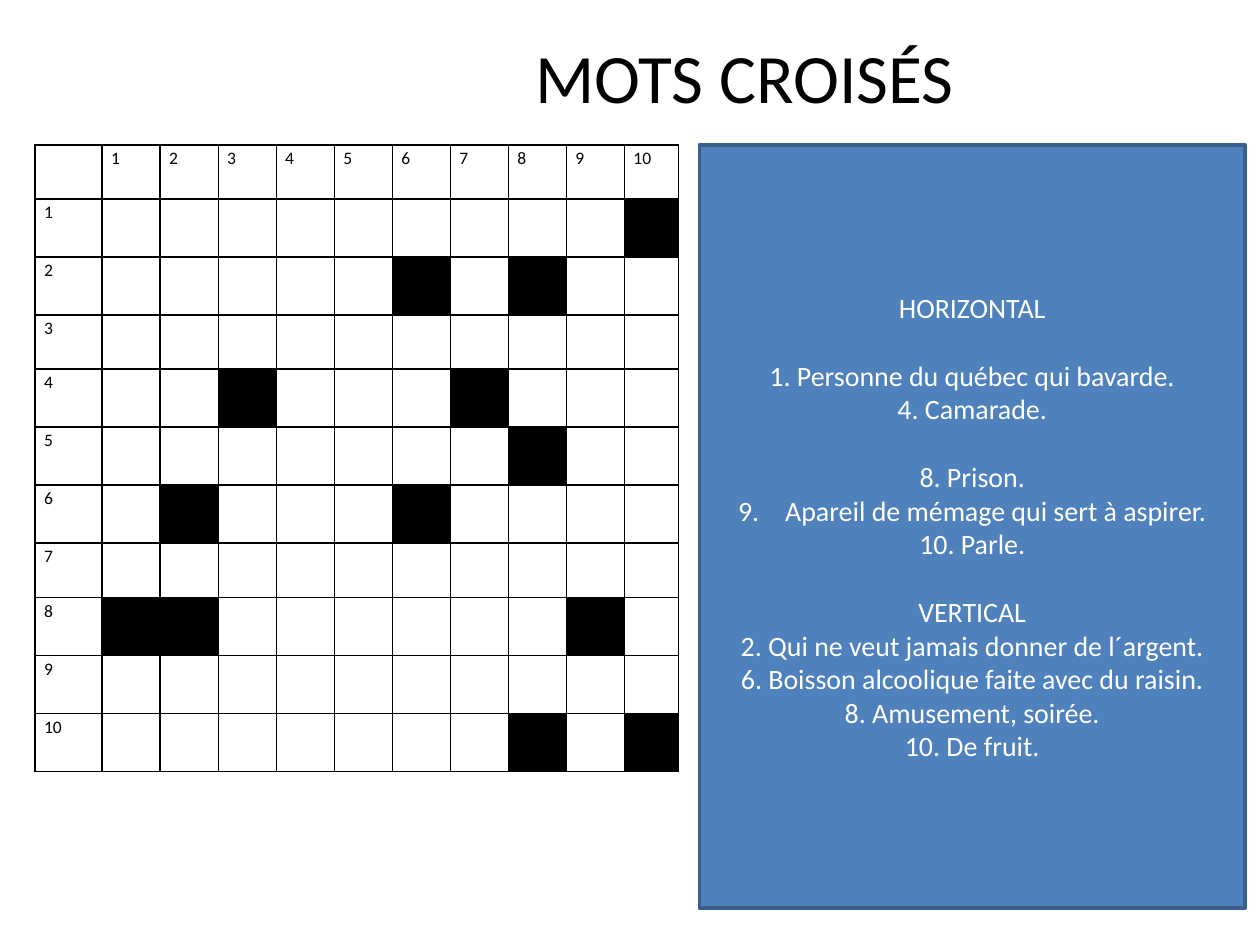
from dataclasses import dataclass

from lxml import etree
from pptx import Presentation
from pptx.dml.color import RGBColor
from pptx.enum.shapes import MSO_SHAPE
from pptx.enum.text import MSO_ANCHOR, PP_ALIGN
from pptx.oxml.ns import qn
from pptx.util import Cm, Pt

RECTANGLE = MSO_SHAPE.RECTANGLE
MIDDLE = MSO_ANCHOR.MIDDLE
CENTER = PP_ALIGN.CENTER
FONT = "Calibri"
COLORS = {"black": "000000", "white": "FFFFFF", "panel": "4F81BD", "edge": "3A5F8C"}
SIZE = 10
SHORT, LONG, LABEL = 1.09, 1.17, 1.35
SHORT_ROWS = {0, 3, 7}
BLACK_CELLS = {
    (1, 10), (2, 6), (2, 8), (4, 3), (4, 7), (5, 8), (6, 2), (6, 6),
    (8, 1), (8, 2), (8, 9), (10, 8), (10, 10),
}
LINE_GAP = 19.5


@dataclass
class Clue:
    text: str
    gap: bool = False
    number: int = 0


CLUES = [
    Clue("HORIZONTAL"),
    Clue("1. Personne du québec qui bavarde.", gap=True),
    Clue("4. Camarade."),
    Clue("8. Prison.", gap=True),
    Clue("Apareil de mémage qui sert à aspirer.", number=9),
    Clue("10. Parle."),
    Clue("VERTICAL", gap=True),
    Clue("2. Qui ne veut jamais donner de l´argent."),
    Clue("6. Boisson alcoolique faite avec du raisin."),
    Clue("8. Amusement, soirée."),
    Clue("10. De fruit."),
]


def rgb(name: str) -> RGBColor:
    return RGBColor.from_string(COLORS[name])


def style(p, size: float, color: str) -> None:
    for r in p.runs:
        r.font.name = FONT
        r.font.size = Pt(size)
        r.font.color.rgb = rgb(color)


def add_title(s, text: str) -> None:
    tf = s.shapes.add_textbox(Cm(5.89), Cm(0.76), Cm(18.24), Cm(1.55)).text_frame
    tf.word_wrap = True
    tf.vertical_anchor = MIDDLE
    tf.text = text
    p = tf.paragraphs[0]
    p.alignment = CENTER
    style(p, 39.6, "black")


def number_paragraph(p, start: int) -> None:
    pPr = p._p.get_or_add_pPr()
    pPr.set("marL", str(Cm(0.95)))
    pPr.set("indent", str(-Cm(0.95)))
    etree.SubElement(pPr, qn("a:buFont"), typeface="+mj-lt")
    etree.SubElement(pPr, qn("a:buAutoNum"), type="arabicPeriod", startAt=str(start))


def add_clues(s, clues: list[Clue]) -> None:
    sp = s.shapes.add_shape(RECTANGLE, Cm(14.1), Cm(2.92), Cm(11), Cm(15.39))
    sp.shadow.inherit = False
    sp.fill.solid()
    sp.fill.fore_color.rgb = rgb("panel")
    sp.line.color.rgb = rgb("edge")
    sp.line.width = Pt(2)
    tf = sp.text_frame
    tf.word_wrap = True
    tf.vertical_anchor = MIDDLE
    tf.text = "\n".join(clue.text for clue in clues)
    for p, clue in zip(tf.paragraphs, clues):
        p.alignment = CENTER
        if clue.gap:
            p.space_before = Pt(LINE_GAP)
        if clue.number:
            number_paragraph(p, clue.number)
        style(p, 16, "white")


def add_borders(cell) -> None:
    tcPr = cell._tc.get_or_add_tcPr()
    for i, side in enumerate(("lnL", "lnR", "lnT", "lnB")):
        ln = etree.Element(qn(f"a:{side}"), w=str(Pt(1)))
        fill = etree.SubElement(ln, qn("a:solidFill"))
        etree.SubElement(fill, qn("a:srgbClr"), val=COLORS["black"])
        tcPr.insert(i, ln)


def format_cell(cell, row: int, col: int) -> None:
    cell.margin_left = cell.margin_right = Cm(0.18)
    cell.margin_top = cell.margin_bottom = 0
    cell.fill.solid()
    cell.fill.fore_color.rgb = rgb("black" if (row, col) in BLACK_CELLS else "white")
    if (row == 0) != (col == 0):
        cell.text = str(row or col)
        p = cell.text_frame.paragraphs[0]
        p.line_spacing = 1.15
        style(p, 10, "black")
    add_borders(cell)


def add_grid(s) -> None:
    widths = [LABEL] + [LONG] * (SIZE - 1) + [SHORT]
    heights = [SHORT if i in SHORT_ROWS else LONG for i in range(SIZE + 1)]
    table = s.shapes.add_table(
        SIZE + 1, SIZE + 1, Cm(0.71), Cm(2.92), Cm(sum(widths)), Cm(sum(heights))
    ).table
    table.first_row = False
    table.horz_banding = False
    for column, width in zip(table.columns, widths):
        column.width = Cm(width)
    for i, (row, height) in enumerate(zip(table.rows, heights)):
        row.height = Cm(height)
        for j, cell in enumerate(row.cells):
            format_cell(cell, i, j)


def main() -> None:
    prs = Presentation()
    prs.slide_width, prs.slide_height = Cm(25.4), Cm(19.05)
    s = prs.slides.add_slide(prs.slide_layouts[6])
    add_title(s, "MOTS CROISÉS")
    add_clues(s, CLUES)
    add_grid(s)
    prs.save("out.pptx")


if __name__ == "__main__":
    main()
